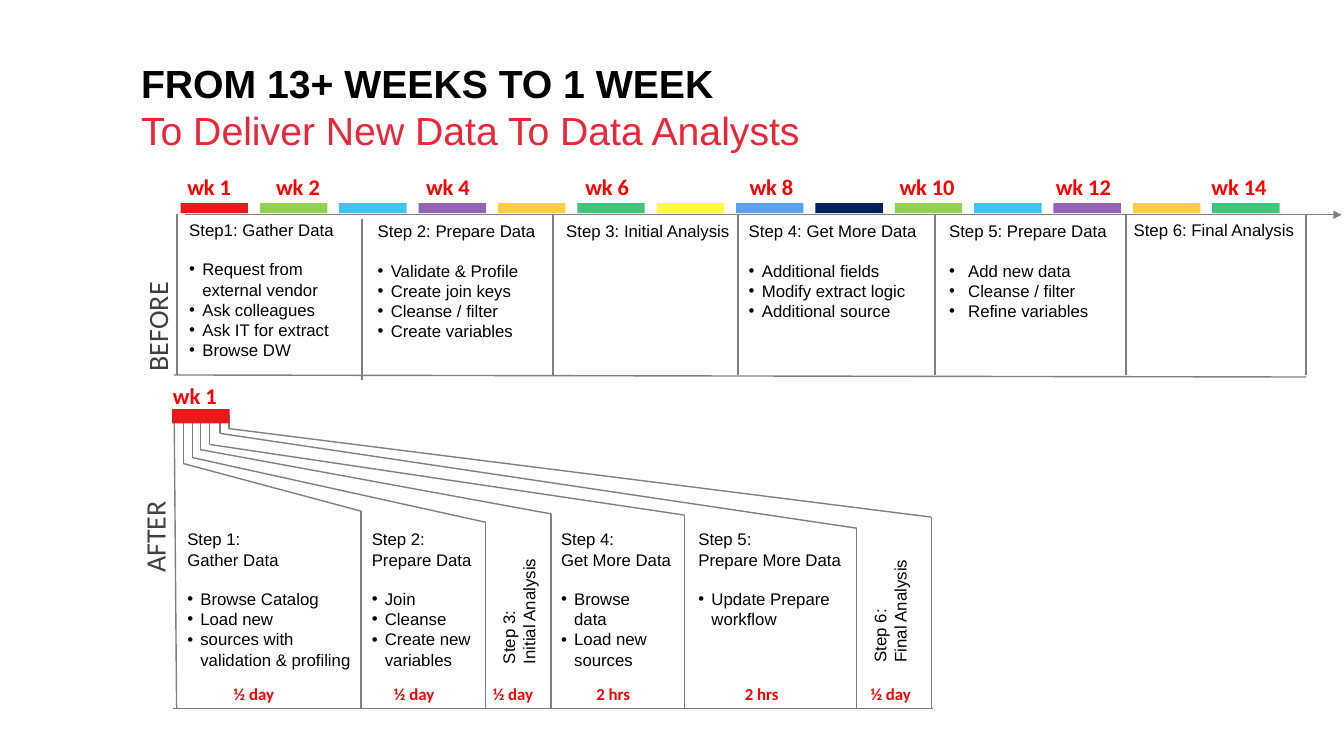
from dataclasses import dataclass

from lxml.etree import SubElement
from pptx import Presentation
from pptx.dml.color import RGBColor
from pptx.enum.shapes import MSO_CONNECTOR as Connector, MSO_SHAPE as Shape
from pptx.enum.text import MSO_ANCHOR as Anchor, MSO_AUTO_SIZE as AutoSize, PP_ALIGN as Align
from pptx.oxml.ns import qn
from pptx.util import Cm, Pt


@dataclass(frozen=True)
class Theme:
    heading_font: str = "Arial"
    label_font: str = "Calibri"
    ink: str = "000000"
    accent: str = "EA2739"
    rule: str = "808080"
    side: str = "404040"
    time: str = "FF0000"
    first_week: str = "E71A1C"
    title_size: float = 28
    side_size: float = 20
    week_size: float = 16
    body_size: float = 12
    line_gap: float = 13.8


class TimelineSlide:
    def __init__(self, deck, theme):
        self.theme = theme
        self.slide = deck.slides.add_slide(deck.slide_layouts[5])

    def style(self, paragraph, size, color, font, bold=False):
        for run in paragraph.runs:
            run.font.size = Pt(size)
            run.font.name = font
            run.font.bold = bold
            run.font.color.rgb = RGBColor.from_string(color)

    def title(self, headline, subtitle, left, top, width, height):
        heading = self.slide.shapes.title
        heading.left, heading.top = Cm(left), Cm(top)
        heading.width, heading.height = Cm(width), Cm(height)
        frame = heading.text_frame
        frame.text = f"{headline}\n{subtitle}"
        frame.vertical_anchor = Anchor.TOP
        frame.auto_size = AutoSize.NONE
        looks = [(self.theme.ink, True), (self.theme.accent, False)]
        for paragraph, (color, bold) in zip(frame.paragraphs, looks):
            paragraph.alignment = Align.LEFT
            self.style(paragraph, self.theme.title_size, color, self.theme.heading_font, bold)

    def text(self, content, left, top, width, height, size, color, font,
             bold=False, turn=0, align=Align.LEFT):
        box = self.slide.shapes.add_textbox(Cm(left), Cm(top), Cm(width), Cm(height))
        box.rotation = turn
        frame = box.text_frame
        frame.word_wrap = True
        frame.auto_size = AutoSize.SHAPE_TO_FIT_TEXT
        frame.text = content
        for paragraph in frame.paragraphs:
            paragraph.alignment = align
            self.style(paragraph, size, color, font, bold)
        return frame

    def label(self, content, left, top, width, height, size):
        return self.text(content, left, top, width, height, size, self.theme.time,
                         self.theme.label_font, bold=True)

    def tabbed_label(self, words, stops, left, top, width, height):
        frame = self.label("\t".join(words), left, top, width, height, self.theme.week_size)
        tabs = SubElement(frame.paragraphs[0]._p.get_or_add_pPr(), qn("a:tabLst"))
        for stop in stops:
            SubElement(tabs, qn("a:tab"), pos=str(Cm(stop)), algn="l")

    def side_label(self, content, left, top, width, height):
        self.text(content, left, top, width, height, self.theme.side_size,
                  self.theme.side, self.theme.label_font, turn=270)

    def step(self, heading, tasks, left, top, width, height,
             indent=0.33, turn=0, align=Align.LEFT):
        frame = self.text("\n".join([heading, *tasks]), left, top, width, height,
                          self.theme.body_size, self.theme.ink, self.theme.heading_font,
                          turn=turn, align=align)
        if tasks:
            task_start = len(frame.paragraphs) - len(tasks)
            frame.paragraphs[task_start - 1].space_after = Pt(self.theme.line_gap)
            for task in frame.paragraphs[task_start:]:
                properties = task._p.get_or_add_pPr()
                properties.set("marL", str(Cm(indent)))
                properties.set("indent", str(-Cm(indent)))
                SubElement(properties, qn("a:buFont"), typeface="Arial")
                SubElement(properties, qn("a:buChar"), char="•")

    def bar(self, left, top, width, height, color, opacity=100):
        week = self.slide.shapes.add_shape(Shape.RECTANGLE, Cm(left), Cm(top), Cm(width), Cm(height))
        week.shadow.inherit = False
        week.line.fill.background()
        week.fill.solid()
        week.fill.fore_color.rgb = RGBColor.from_string(color)
        if opacity < 100:
            tint = week._element.spPr.find(qn("a:solidFill"))[0]
            SubElement(tint, qn("a:alpha"), val=str(opacity * 1000))

    def rule(self, start, end, weight=1, arrow=False):
        rule = self.slide.shapes.add_connector(Connector.STRAIGHT, *map(Cm, start + end))
        rule.line.color.rgb = RGBColor.from_string(self.theme.rule)
        rule.line.width = Pt(weight)
        if arrow:
            SubElement(rule.line._get_or_add_ln(), qn("a:tailEnd"), type="triangle")
        SubElement(rule._element.spPr, qn("a:effectLst"))

    def route(self, *points):
        for start, end in zip(points, points[1:]):
            self.rule(start, end)


BEFORE_STEPS = [
    ("Step1: Gather Data",
     ["Request from\vexternal vendor", "Ask colleagues", "Ask IT for extract", "Browse DW"],
     4.52, 5.41, 5.33, 4.37, {}),
    ("Step 2: Prepare Data",
     ["Validate & Profile", "Create join keys", "Cleanse / filter", "Create variables"],
     9.27, 5.44, 5.08, 3.33, {}),
    ("Step 3: Initial Analysis", [], 13.41, 5.44, 5.84, 0.76, {"align": Align.CENTER}),
    ("Step 4: Get More Data",
     ["Additional fields", "Modify extract logic", "Additional source"],
     18.62, 5.44, 5.44, 2.82, {}),
    ("Step 5: Prepare Data", ["Add new data", "Cleanse / filter", "Refine variables"],
     23.67, 5.44, 4.98, 2.82, {"indent": 0.48}),
    ("Step 6: Final Analysis", [], 28.32, 5.41, 5.03, 0.76, {}),
]
AFTER_STEPS = [
    ("Step 1: \vGather Data",
     ["Browse Catalog", "Load new", "sources with validation & profiling"],
     4.47, 13.21, 4.85, 3.84, {}),
    ("Step 2: \vPrepare Data", ["Join", "Cleanse", "Create new variables"],
     9.12, 13.21, 4.27, 3.84, {}),
    ("Step 3:\nInitial Analysis", [], 9.5, 12.78, 7.14, 1.27, {"turn": 270}),
    ("Step 4:\nGet More Data", ["Browse \vdata", "Load new sources"],
     13.89, 13.21, 3.63, 3.84, {}),
    ("Step 5: \vPrepare More Data", ["Update Prepare \vworkflow"],
     17.35, 13.21, 6.07, 2.82, {}),
    ("Step 6:\nFinal Analysis", [], 18.97, 12.85, 6.91, 1.27, {"turn": 270}),
]
AFTER_ROUTES = [
    (4.62, 11.68, 9.1, 12.88),
    (4.85, 11.53, 12.24, 13.16),
    (5.05, 11.33, 13.89, 12.95),
    (5.28, 11.2, 17.25, 12.98),
    (5.54, 10.92, 21.59, 13.31),
    (5.77, 10.8, 23.47, 13.03),
]
DURATIONS = [("½ day", 5.64), ("½ day", 9.68), ("½ day", 12.17),
             ("2 hrs", 14.78), ("2 hrs", 18.52), ("½ day", 21.69)]
CYCLE = [("92D050", 100), ("00B0F0", 75), ("7030A0", 75), ("FFC000", 75), ("00B050", 75)]


def main():
    deck = Presentation()
    deck.slide_width, deck.slide_height = Cm(33.87), Cm(19.05)
    theme = Theme()
    page = TimelineSlide(deck, theme)
    page.title("FROM 13+ WEEKS TO 1 WEEK", "To Deliver New Data To Data Analysts",
               3.3, 1.37, 27.89, 2.64)

    weeks = [(theme.first_week, 100), *CYCLE, ("FFFF00", 75), ("2481EB", 75), ("002060", 100), *CYCLE]
    for number, (color, opacity) in enumerate(weeks):
        page.bar(4.55 + 2 * number, 5.12, 1.7, 0.25, color, opacity)
    page.tabbed_label(["wk 1"] + [f"wk {week}" for week in range(2, 15, 2)],
                      [2.24, 6.02, 10.03, 14.17, 17.95, 21.89, 25.81],
                      4.47, 4.24, 28.37, 0.94)
    page.rule((4.67, 5.41), (33.81, 5.41), arrow=True)
    for divider in [4.47, 13.94, 18.59, 23.57, 28.37, 32.92]:
        page.rule((divider, 5.38), (divider, 9.45), 1.5)
    page.rule((9.12, 5.51), (9.12, 9.58), 1.5)
    page.rule((32.92, 9.5), (4.39, 9.45))
    page.side_label("BEFORE", 2.06, 7.14, 3.81, 1.12)

    stub_top, floor = 10.46, 17.86
    page.rule((4.39, stub_top), (4.45, floor))
    for stub, bend, foot, shoulder in AFTER_ROUTES:
        page.route((stub, stub_top), (stub, bend), (foot, shoulder), (foot, floor))
    page.rule((23.5, floor), (4.37, floor))
    page.bar(4.34, 10.31, 1.45, 0.36, theme.first_week)
    page.label("wk 1", 4.11, 9.5, 2.51, 0.94, theme.week_size)
    page.side_label("AFTER", 2.18, 12.4, 3.45, 1.12)

    for heading, tasks, left, top, width, height, options in BEFORE_STEPS + AFTER_STEPS:
        page.step(heading, tasks, left, top, width, height, **options)
    for duration, left in DURATIONS:
        page.label(duration, left, 17.1, 1.8, 0.76, theme.body_size)

    deck.save("out.pptx")


if __name__ == "__main__":
    main()
